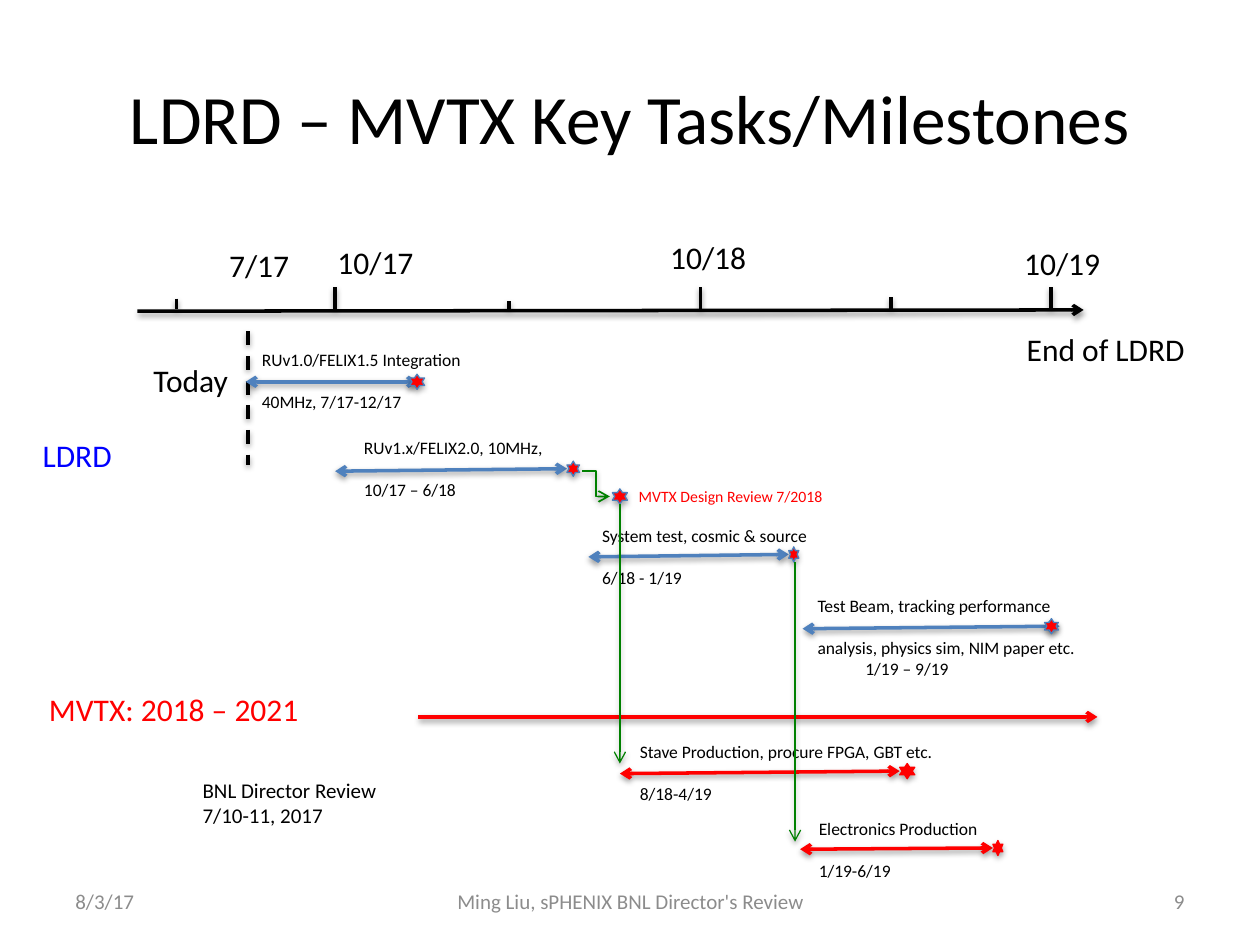
from lxml import etree
from pptx import Presentation
from pptx.dml.color import RGBColor
from pptx.enum.dml import MSO_LINE
from pptx.enum.shapes import MSO_CONNECTOR as CONN, MSO_SHAPE
from pptx.enum.text import MSO_ANCHOR, MSO_AUTO_SIZE, PP_ALIGN
from pptx.oxml.ns import qn
from pptx.util import Inches, Pt

BLACK = RGBColor(0x00, 0x00, 0x00)
RED = RGBColor(0xFF, 0x00, 0x00)
BLUE = RGBColor(0x4F, 0x81, 0xBD)
STAR_EDGE = RGBColor(0x4B, 0x7E, 0xBC)
LABEL_BLUE = RGBColor(0x00, 0x00, 0xFF)
GREEN = RGBColor(0x00, 0x80, 0x00)
GRAY = RGBColor(0x8C, 0x8C, 0x8C)

STAR_H = 0.12
AXIS_Y = 2.45

# Task: first line, second line, text box, arrow start, arrow end, star left, star width, colour
TASKS = [
    ("RUv1.0/FELIX1.5 Integration", "40MHz, 7/17-12/17", (1.98, 2.72, 2.21, 0.61),
     (1.95, 3.03), (3.32, 3.03), 3.25, 0.12, BLUE),
    ("RUv1.x/FELIX2.0, 10MHz,", "10/17 – 6/18", (2.79, 3.42, 2.16, 0.61),
     (2.66, 3.74), (4.5, 3.72), 4.5, 0.1, BLUE),
    ("System test, cosmic & source", "6/18 - 1/19", (4.68, 4.12, 1.86, 0.61),
     (4.67, 4.42), (6.26, 4.4), 6.26, 0.08, BLUE),
    ("Test Beam, tracking performance", "analysis, physics sim, NIM paper etc.",
     (6.39, 4.67, 2.4, 0.77), (6.37, 4.99), (8.41, 4.97), 8.29, 0.11, BLUE),
    ("Stave Production, procure FPGA, GBT etc.", "8/18-4/19", (4.98, 5.83, 2.57, 0.61),
     (4.92, 6.14), (7.14, 6.12), 7.14, 0.12, RED),
    ("Electronics Production", "1/19-6/19", (6.4, 6.44, 1.73, 0.61),
     (6.35, 6.74), (7.88, 6.73), 7.88, 0.08, RED),
]

# Label: lines, box, size, colour
LABELS = [
    (["7/17"], (1.72, 1.9, 0.68, 0.4), 18, BLACK),
    (["10/17"], (2.58, 1.88, 0.81, 0.4), 18, BLACK),
    (["10/18"], (5.22, 1.84, 0.81, 0.4), 18, BLACK),
    (["10/19"], (8.03, 1.89, 0.81, 0.4), 18, BLACK),
    (["Today"], (1.12, 2.82, 0.83, 0.4), 18, BLACK),
    (["End of LDRD"], (8.05, 2.57, 1.47, 0.4), 18, BLACK),
    (["LDRD"], (0.24, 3.41, 0.76, 0.4), 18, LABEL_BLUE),
    (["MVTX: 2018 – 2021"], (0.29, 5.43, 2.2, 0.4), 18, RED),
    (["MVTX Design Review 7/2018"], (4.97, 3.81, 1.68, 0.25), 9, RED),
    (["BNL Director Review", "7/10-11, 2017"], (1.51, 6.12, 1.6, 0.5), 12, BLACK),
]

FOOTERS = [
    ("8/3/17", (0.5, 6.95, 2.33, 0.4), PP_ALIGN.LEFT),
    ("Ming Liu, sPHENIX BNL Director's Review", (3.42, 6.95, 3.17, 0.4), PP_ALIGN.CENTER),
    ("9", (7.17, 6.95, 2.33, 0.4), PP_ALIGN.RIGHT),
]

# Axis ticks: x, top
TICKS = [(1.4, 2.37), (2.66, 2.28), (4.04, 2.39), (5.56, 2.28), (7.07, 2.36), (8.34, 2.28)]


def add_shadow(s, distance, opacity):
    effects = etree.SubElement(s._element.spPr, qn("a:effectLst"))
    shadow = etree.SubElement(effects, qn("a:outerShdw"), blurRad="40000",
                              dist=str(distance), dir="5400000", rotWithShape="0")
    color = etree.SubElement(shadow, qn("a:srgbClr"), val="000000")
    etree.SubElement(color, qn("a:alpha"), val=str(opacity * 1000))


def add_line(slide, start, end, color, width=2, ends=(), kind=CONN.STRAIGHT, dash=None):
    s = slide.shapes.add_connector(kind, *map(Inches, start + end))
    s.line.color.rgb = color
    s.line.width = Pt(width)
    if dash:
        s.line.dash_style = dash
    ln = s.line._get_or_add_ln()
    for name in ends:
        etree.SubElement(ln, qn(f"a:{name}End"), type="arrow")
    add_shadow(s, 20000, 38)


def add_star(slide, left, top, width, edge):
    s = slide.shapes.add_shape(MSO_SHAPE.STAR_6_POINT,
                               *map(Inches, (left, top, width, STAR_H)))
    s.fill.solid()
    s.fill.fore_color.rgb = RED
    s.line.color.rgb = edge
    s.line.width = Pt(0.75)
    add_shadow(s, 23000, 35)


def add_text(slide, lines, box, size, color, align=PP_ALIGN.LEFT, wrap=False, middle=False):
    s = slide.shapes.add_textbox(*map(Inches, box))
    tf = s.text_frame
    frame_format = {
        "word_wrap": wrap,
        "auto_size": MSO_AUTO_SIZE.NONE if middle else MSO_AUTO_SIZE.SHAPE_TO_FIT_TEXT,
        "vertical_anchor": MSO_ANCHOR.MIDDLE if middle else MSO_ANCHOR.TOP,
    }
    for name, value in frame_format.items():
        setattr(tf, name, value)
    for i, line in enumerate(lines):
        p = tf.add_paragraph() if i else tf.paragraphs[0]
        p.alignment = align
        r = p.add_run()
        r.text = line
        for name, value in {"name": "Calibri", "size": Pt(size)}.items():
            setattr(r.font, name, value)
        r.font.color.rgb = color
    return tf


def add_task(slide, first, second, box, start, end, star_left, star_width, color):
    lines = [first, second]
    is_test_beam = first.startswith("Test Beam")
    if is_test_beam:
        lines.append("1/19 – 9/19")
    tf = add_text(slide, lines, box, 10, BLACK, wrap=True)
    # The arrow runs through the gap between the first two lines
    tf.paragraphs[1].space_before = Pt(12)
    if is_test_beam:
        tf.paragraphs[2]._p.get_or_add_pPr().set("marL", str(Inches(0.38)))
    add_line(slide, start, end, color, ends=("head", "tail"))
    add_star(slide, star_left, end[1] - 0.06, star_width, RED if color == RED else STAR_EDGE)


def main():
    prs = Presentation()
    prs.slide_width, prs.slide_height = Inches(10), Inches(7.5)
    slide = prs.slides.add_slide(prs.slide_layouts[6])

    # Title
    add_text(slide, ["LDRD – MVTX Key Tasks/Milestones"], (0.5, 0.3, 9, 1.25), 39.6, BLACK,
             PP_ALIGN.CENTER, wrap=True, middle=True)

    # Time axis, today marker and project bar
    add_line(slide, (1.09, 2.47), (8.6, 2.46), BLACK, ends=("tail",))
    for x, top in TICKS:
        add_line(slide, (x, top), (x, AXIS_Y), BLACK)
    add_line(slide, (1.97, 2.63), (1.97, 3.69), BLACK, dash=MSO_LINE.DASH)
    add_line(slide, (3.32, 5.69), (8.71, 5.69), RED, ends=("tail",))

    # Tasks and the design review milestone
    for task in TASKS:
        add_task(slide, *task)
    add_star(slide, 4.86, 3.88, 0.12, STAR_EDGE)

    # Dependencies
    add_line(slide, (4.92, 4), (4.92, 6.06), GREEN, 0.75, ("tail",))
    add_line(slide, (6.31, 4.46), (6.31, 6.68), GREEN, 0.75, ("tail",))
    add_line(slide, (4.62, 3.74), (4.84, 3.94), GREEN, 1, ("tail",), CONN.ELBOW)

    # Labels and footer
    for label in LABELS:
        add_text(slide, *label)
    for text, box, align in FOOTERS:
        add_text(slide, [text], box, 12, GRAY, align, wrap=True, middle=True)

    prs.save("out.pptx")


if __name__ == "__main__":
    main()
